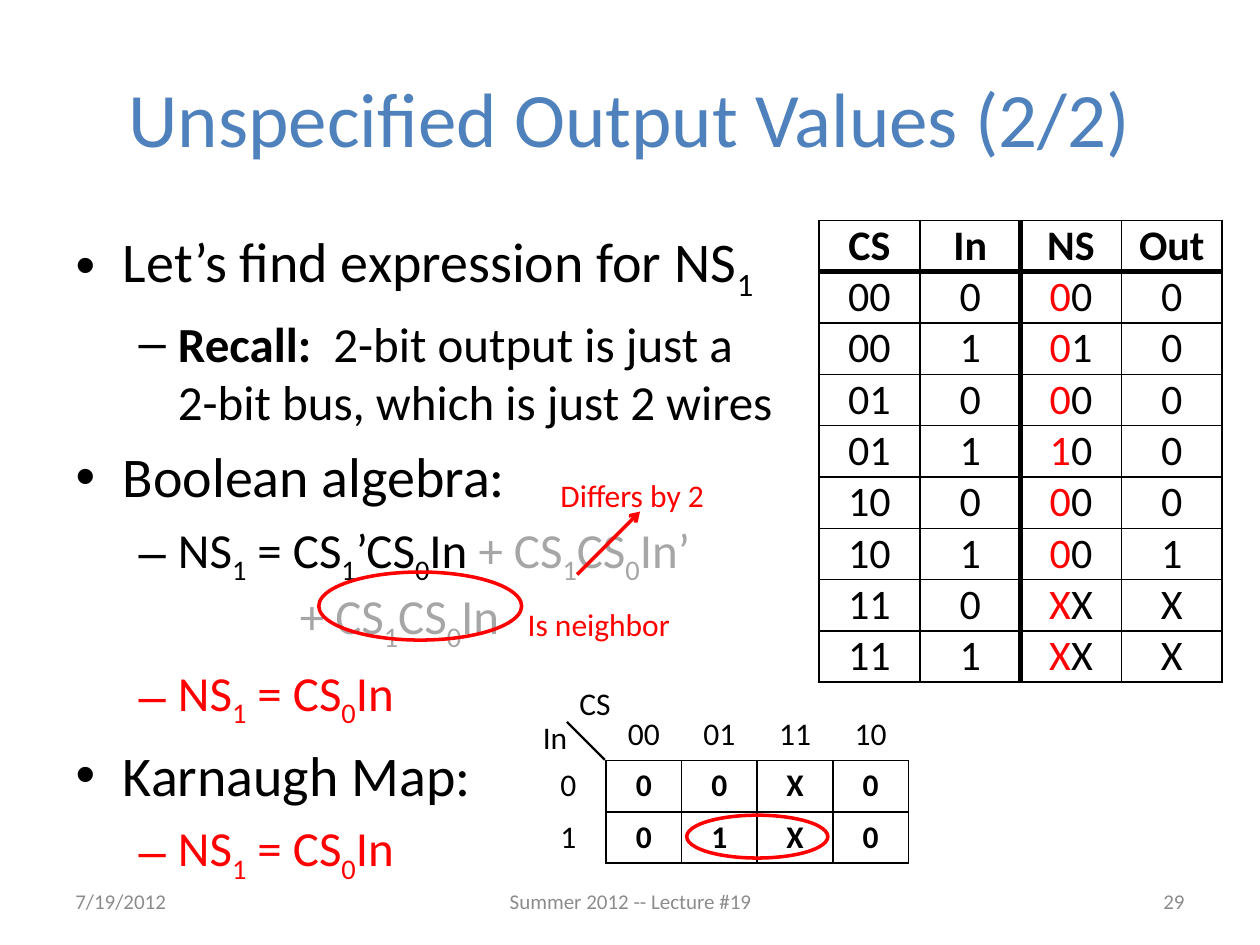
from dataclasses import dataclass
from typing import NamedTuple

from lxml import etree
from pptx import Presentation
from pptx import util as u
from pptx.dml.color import RGBColor
from pptx.enum import shapes, text
from pptx.oxml.ns import qn

# The slide is a grid of 100 columns by 75 rows.
SLIDE_WIDTH, SLIDE_HEIGHT = u.Inches(10), u.Inches(7.5)
COLUMN, ROW = SLIDE_WIDTH / 100, SLIDE_HEIGHT / 75
ALIGN = text.PP_ALIGN


@dataclass(frozen=True)
class Theme:
    font: str = "Calibri"
    title: str = "4F81BD"
    ink: str = "000000"
    accent: str = "FF0000"
    faded: str = "A6A6A6"
    footer: str = "8C8C8C"
    title_size: float = 44
    bullet_sizes: tuple[float, float] = (32, 28)
    truth_size: float = 24
    label_size: float = 18
    footer_size: float = 12
    thin: float = 1
    corner: float = 1.25
    mark: float = 2
    thick: float = 3


THEME = Theme()


class Box(NamedTuple):
    column: float
    row: float
    columns: float
    rows: float

    def emu(self) -> tuple[int, int, int, int]:
        return (round(self.column * COLUMN), round(self.row * ROW),
                round(self.columns * COLUMN), round(self.rows * ROW))


class Piece(NamedTuple):
    """Text in one style; an underscore lowers the next character."""
    words: str
    color: str = THEME.ink
    bold: bool = False


class Bullet(NamedTuple):
    level: int
    lines: list[list[Piece]]


class Label(NamedTuple):
    box: Box
    words: str
    color: str
    size: float = THEME.label_size
    align: ALIGN = ALIGN.LEFT
    fits_text: bool = True


class Line(NamedTuple):
    start: tuple[float, float]
    end: tuple[float, float]
    color: str
    width: float
    arrow: bool = False


REDUCED = [Piece("NS_1 = CS_0In", THEME.accent)]
BULLETS = [
    Bullet(0, [[Piece("Let’s find expression for NS_1")]]),
    Bullet(1, [[Piece("Recall:", bold=True), Piece("  2-bit output is just a")],
               [Piece("2-bit bus, which is just 2 wires")]]),
    Bullet(0, [[Piece("Boolean algebra:")]]),
    Bullet(1, [[Piece("NS_1 = CS_1’CS_0In "), Piece("+ CS_1CS_0In’", THEME.faded)]]),
    Bullet(1, [[Piece("+ CS_1CS_0In", THEME.faded)]]),
    Bullet(1, [REDUCED]),
    Bullet(0, [[Piece("Karnaugh Map:")]]),
    Bullet(1, [REDUCED]),
]
SECOND_SUM_LINE = 4
SUM_INDENT = 17.8

TRUTH_ROWS = [
    ("CS", "In", "NS", "Out"),
    ("00", "0", "00", "0"), ("00", "1", "01", "0"),
    ("01", "0", "00", "0"), ("01", "1", "10", "0"),
    ("10", "0", "00", "0"), ("10", "1", "00", "1"),
    ("11", "0", "XX", "X"), ("11", "1", "XX", "X"),
]
MAP_ROWS = [
    ("", "00", "01", "11", "10"),
    ("0", "0", "0", "X", "0"),
    ("1", "0", "1", "X", "0"),
]
LABELS = [
    Label(Box(5, 69.5, 23.3, 4), "7/19/2012", THEME.footer, THEME.footer_size,
          ALIGN.LEFT, False),
    Label(Box(34.2, 69.5, 31.7, 4), "Summer 2012 -- Lecture #19", THEME.footer,
          THEME.footer_size, ALIGN.CENTER, False),
    Label(Box(71.7, 69.5, 23.3, 4), "29", THEME.footer, THEME.footer_size,
          ALIGN.RIGHT, False),
    Label(Box(43.5, 37.3, 13.6, 4), "Differs by 2", THEME.accent),
    Label(Box(40.9, 47.5, 13.4, 4), "Is neighbor", THEME.accent),
    Label(Box(45, 53.8, 4.5, 4), "CS", THEME.ink),
    Label(Box(42.1, 56.5, 4, 4), "In", THEME.ink),
]
LINES = [
    Line((45.8, 45.6), (50.8, 40.6), THEME.accent, THEME.mark, arrow=True),
    Line((45, 57.3), (48, 60.3), THEME.ink, THEME.corner),
]
RINGS = [Box(25.3, 45.4, 16.1, 5.4), Box(54.5, 64.7, 11.2, 3.4)]


def add_piece(paragraph, piece: Piece, size: float) -> None:
    def add_run(words: str, lowered: bool = False) -> None:
        if not words:
            return
        run = paragraph.add_run()
        run.text = words
        run.font.name, run.font.size = THEME.font, u.Pt(size)
        run.font.bold = piece.bold
        run.font.color.rgb = RGBColor.from_string(piece.color)
        if lowered:
            run._r.get_or_add_rPr().set("baseline", "-25000")

    first, *others = piece.words.split("_")
    add_run(first)
    for part in others:
        add_run(part[0], lowered=True)
        add_run(part[1:])


def fill_bullets(frame) -> None:
    frame.auto_size = text.MSO_AUTO_SIZE.NONE
    for index, bullet in enumerate(BULLETS):
        paragraph = frame.paragraphs[0] if index == 0 else frame.add_paragraph()
        paragraph.level = bullet.level
        for number, line in enumerate(bullet.lines):
            if number:
                paragraph.add_line_break()
            for piece in line:
                add_piece(paragraph, piece, THEME.bullet_sizes[bullet.level])
        if index == SECOND_SUM_LINE:
            properties = paragraph._p.get_or_add_pPr()
            properties.set("marL", str(round(SUM_INDENT * COLUMN)))
            properties.set("indent", "0")
            etree.SubElement(properties, qn("a:buNone"))
            paragraph.space_before = u.Pt(0)


def add_label(slide, label: Label) -> None:
    frame = slide.shapes.add_textbox(*label.box.emu()).text_frame
    frame.word_wrap = not label.fits_text
    if label.fits_text:
        frame.auto_size = text.MSO_AUTO_SIZE.SHAPE_TO_FIT_TEXT
    else:
        frame.vertical_anchor = text.MSO_ANCHOR.MIDDLE
    paragraph = frame.paragraphs[0]
    paragraph.alignment = label.align
    add_piece(paragraph, Piece(label.words, label.color), label.size)


def add_line(slide, line: Line) -> None:
    points = [round(v * step) for point in (line.start, line.end)
              for v, step in zip(point, (COLUMN, ROW))]
    connector = slide.shapes.add_connector(shapes.MSO_CONNECTOR.STRAIGHT, *points)
    connector.line.color.rgb = RGBColor.from_string(line.color)
    connector.line.width = u.Pt(line.width)
    if line.arrow:
        etree.SubElement(connector.line._get_or_add_ln(), qn("a:tailEnd"), type="arrow")
    etree.SubElement(connector._element.spPr, qn("a:effectLst"))


def add_ring(slide, box: Box) -> None:
    ring = slide.shapes.add_shape(shapes.MSO_SHAPE.OVAL, *box.emu())
    ring.shadow.inherit = False
    ring.fill.background()
    ring.line.color.rgb = RGBColor.from_string(THEME.accent)
    ring.line.width = u.Pt(THEME.mark)


def set_borders(cell, left: float, right: float, top: float, bottom: float) -> None:
    """Give widths in points; zero hides a side."""
    properties = cell._tc.get_or_add_tcPr()
    for side, width in zip("LRTB", (left, right, top, bottom)):
        border = etree.SubElement(properties, qn(f"a:ln{side}"), w=str(u.Pt(width)))
        if width:
            fill = etree.SubElement(border, qn("a:solidFill"))
            etree.SubElement(fill, qn("a:srgbClr"), val=THEME.ink)
        else:
            etree.SubElement(border, qn("a:noFill"))


def add_grid(slide, box: Box, rows: list[tuple[str, ...]], size: float,
             pieces, borders, margin: float | None = None) -> None:
    """Draw a table; pieces and borders are rules of row and column."""
    table = slide.shapes.add_table(len(rows), len(rows[0]), *box.emu()).table
    table.first_row = table.horz_banding = False
    for r, row in enumerate(rows):
        for c, words in enumerate(row):
            cell = table.cell(r, c)
            if margin is not None:
                cell.margin_left = cell.margin_right = u.Pt(margin)
                cell.margin_top = cell.margin_bottom = u.Pt(margin)
            set_borders(cell, *borders(r, c))
            cell.fill.background()
            paragraph = cell.text_frame.paragraphs[0]
            paragraph.alignment = ALIGN.CENTER
            for piece in pieces(r, c, words):
                add_piece(paragraph, piece, size)


def truth_pieces(r: int, c: int, words: str) -> list[Piece]:
    if r and c == 2:
        return [Piece(words[0], THEME.accent), Piece(words[1])]
    return [Piece(words, bold=r == 0)]


def truth_borders(r: int, c: int) -> tuple[float, ...]:
    heavy = (c == 2, c == 1, r == 1, r == 0)
    return tuple(THEME.thick if side else THEME.thin for side in heavy)


def map_pieces(r: int, c: int, words: str) -> list[Piece]:
    return [Piece(words, bold=r > 0 and c > 0)]


def map_borders(r: int, c: int) -> tuple[float, ...]:
    inside = r > 0 and c > 0
    shown = (inside, r > 0, inside, c > 0)
    return tuple(THEME.thin if side else 0 for side in shown)


def main() -> None:
    presentation = Presentation()
    presentation.slide_width, presentation.slide_height = SLIDE_WIDTH, SLIDE_HEIGHT
    slide = presentation.slides.add_slide(presentation.slide_layouts[1])
    title, body = slide.placeholders
    for holder, box in ((title, Box(5, 3, 90, 12.5)), (body, Box(5, 17.5, 90, 54))):
        holder.left, holder.top, holder.width, holder.height = box.emu()
    add_piece(title.text_frame.paragraphs[0],
              Piece("Unspecified Output Values (2/2)", THEME.title), THEME.title_size)
    fill_bullets(body.text_frame)
    add_grid(slide, Box(65, 17.5, 32, 36.54), TRUTH_ROWS, THEME.truth_size,
             truth_pieces, truth_borders, margin=0)
    add_grid(slide, Box(42.1, 56.3, 30, 12.2), MAP_ROWS, THEME.label_size,
             map_pieces, map_borders)
    for line in LINES:
        add_line(slide, line)
    for ring in RINGS:
        add_ring(slide, ring)
    for label in LABELS:
        add_label(slide, label)
    presentation.save("out.pptx")


if __name__ == "__main__":
    main()
